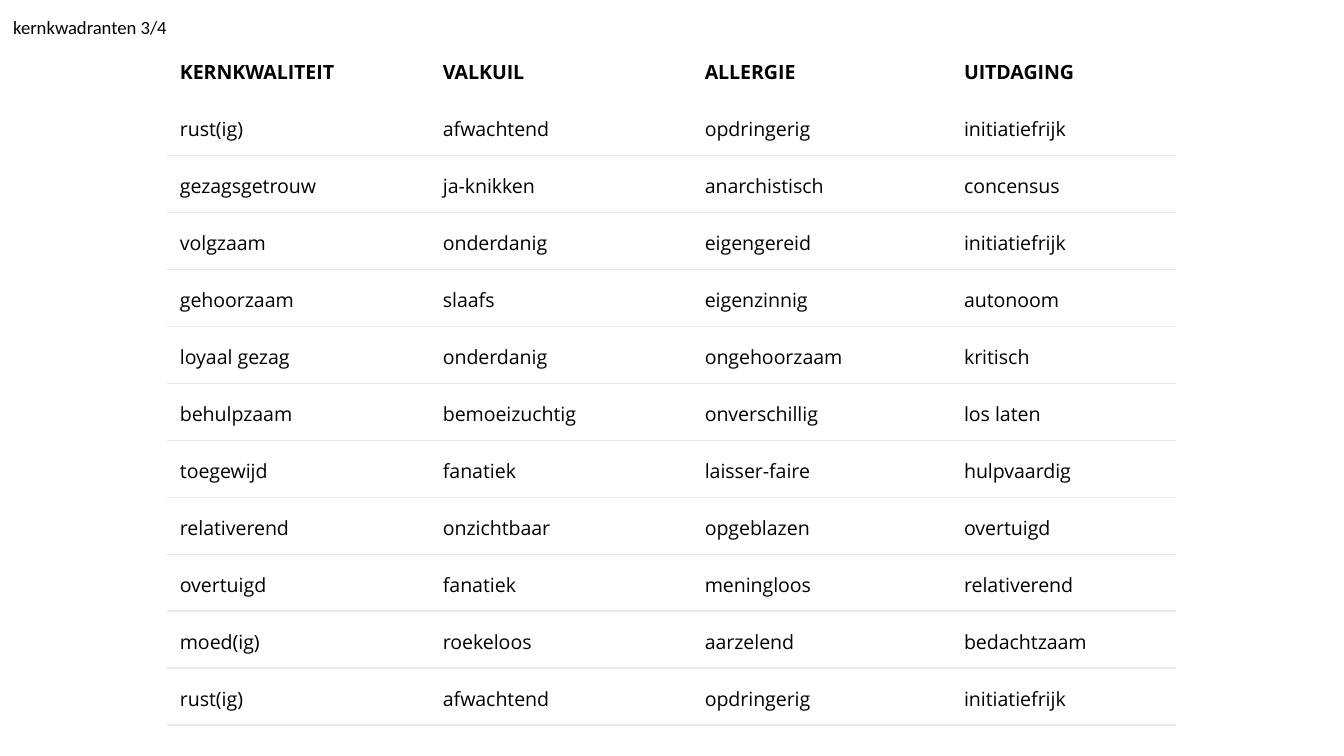
import pptx
import pptx.dml.color
import pptx.oxml
import pptx.oxml.ns
import pptx.util
from pptx.util import Cm

# Content
TITLE = "kernkwadranten 3/4"
ROWS = [
    ("KERNKWALITEIT", "VALKUIL", "ALLERGIE", "UITDAGING"),
    ("rust(ig)", "afwachtend", "opdringerig", "initiatiefrijk"),
    ("gezagsgetrouw", "ja-knikken", "anarchistisch", "concensus"),
    ("volgzaam", "onderdanig", "eigengereid", "initiatiefrijk"),
    ("gehoorzaam", "slaafs", "eigenzinnig", "autonoom"),
    ("loyaal gezag", "onderdanig", "ongehoorzaam", "kritisch"),
    ("behulpzaam", "bemoeizuchtig", "onverschillig", "los laten"),
    ("toegewijd", "fanatiek", "laisser-faire", "hulpvaardig"),
    ("relativerend", "onzichtbaar", "opgeblazen", "overtuigd"),
    ("overtuigd", "fanatiek", "meningloos", "relativerend"),
    ("moed(ig)", "roekeloos", "aarzelend", "bedachtzaam"),
    ("rust(ig)", "afwachtend", "opdringerig", "initiatiefrijk"),
]

# Layout in cm
COL_WIDTHS = [4.97, 4.95, 4.9, 4.26]
TABLE_LEFT, TABLE_TOP, TABLE_HEIGHT = 3.15, 0.79, 12.7
INSET = Cm(0.25)
BLACK, WHITE, RULE = "000000", "FFFFFF", "E9E9E9"


def rgb(color):
    return pptx.dml.color.RGBColor.from_string(color)


def style_text(p, font, size, bold=False):
    p.line_spacing = 1.15
    for r in p.runs:
        r.font.name = font
        r.font.size = pptx.util.Pt(size)
        r.font.bold = bold
        r.font.color.rgb = rgb(BLACK)


def set_borders(cell, ruled_sides):
    """Draw a thin rule on the given sides and clear the others."""
    tc_pr = cell._tc.get_or_add_tcPr()
    for i, side in enumerate("LRTB"):
        paint = "<a:noFill/>"
        if side in ruled_sides:
            paint = f'<a:solidFill><a:srgbClr val="{RULE}"/></a:solidFill>'
        tc_pr.insert(i, pptx.oxml.parse_xml(
            f'<a:ln{side} {pptx.oxml.ns.nsdecls("a")} w="9525">{paint}</a:ln{side}>'))


def set_margins(target):
    target.margin_left = target.margin_right = INSET
    target.margin_top = target.margin_bottom = INSET


prs = pptx.Presentation()
prs.slide_width, prs.slide_height = Cm(25.4), Cm(14.29)
s = prs.slides.add_slide(prs.slide_layouts[6])

# Table
table = s.shapes.add_table(
    len(ROWS), len(COL_WIDTHS), Cm(TABLE_LEFT), Cm(TABLE_TOP),
    Cm(sum(COL_WIDTHS)), Cm(TABLE_HEIGHT)).table
table.first_row = table.horz_banding = False
for column, width in zip(table.columns, COL_WIDTHS):
    column.width = Cm(width)

for i, words in enumerate(ROWS):
    table.rows[i].height = Cm(TABLE_HEIGHT / len(ROWS))
    # No rule around the header; every other row has one below it
    ruled_sides = "" if i == 0 else "B" if i == 1 else "TB"
    for j, word in enumerate(words):
        cell = table.cell(i, j)
        cell.fill.solid()
        cell.fill.fore_color.rgb = rgb(WHITE)
        set_margins(cell)
        set_borders(cell, ruled_sides)
        cell.text_frame.text = word
        style_text(cell.text_frame.paragraphs[0], "Open Sans", 10.5, bold=i == 0)

# Title
tf = s.shapes.add_textbox(0, 0, Cm(8.33), Cm(0.94)).text_frame
tf.word_wrap = True
set_margins(tf)
tf.text = TITLE
p = tf.paragraphs[0]
p.space_after = pptx.util.Pt(12)
style_text(p, "Calibri", 10)

prs.save("out.pptx")
